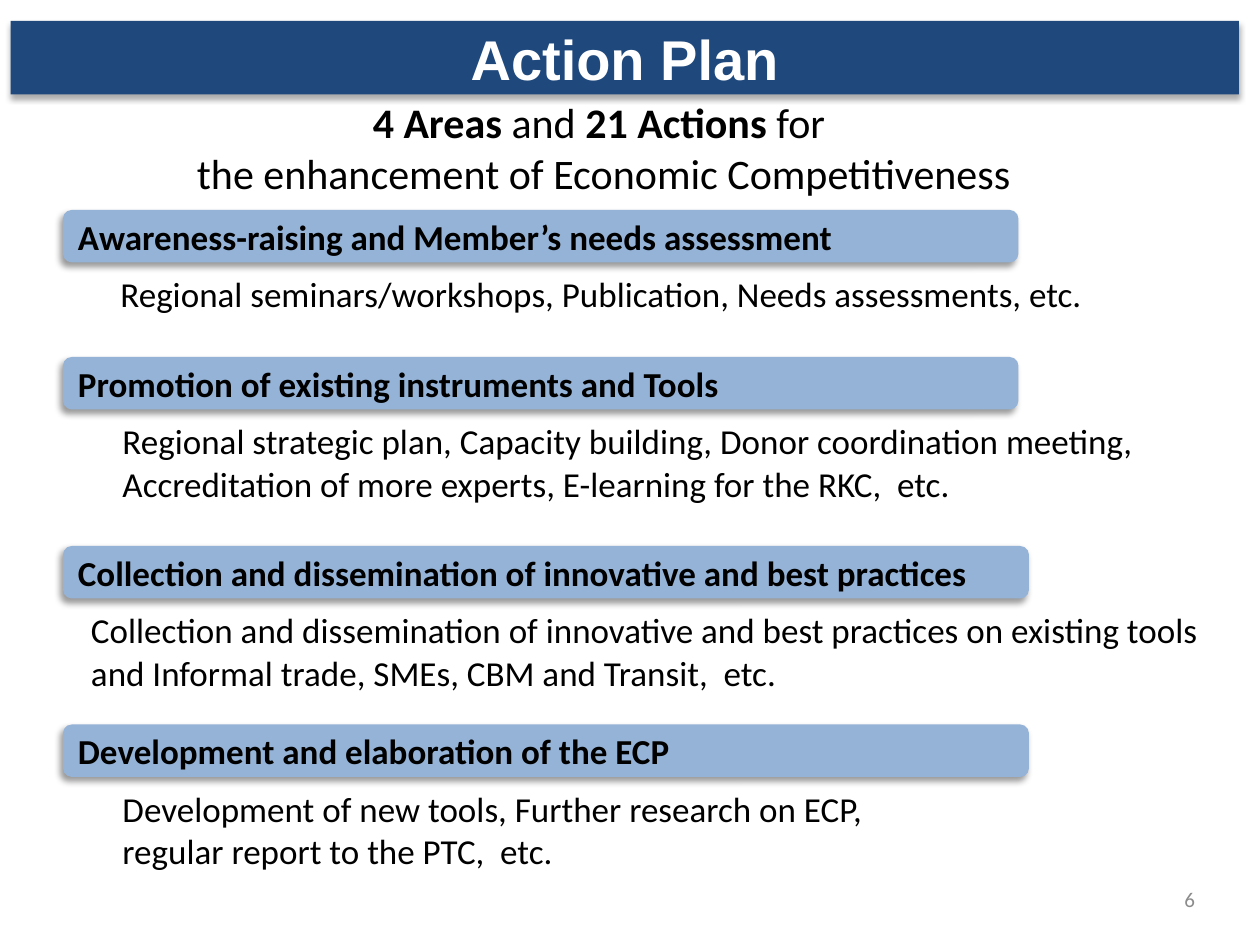
"""Build the Action Plan slide: a title bar, a summary and four areas with their actions."""
from dataclasses import dataclass

from lxml.etree import SubElement as Sub
from pptx import Presentation
from pptx.dml.color import RGBColor as RGB
from pptx.enum.shapes import MSO_SHAPE as Kind
from pptx.enum.text import MSO_ANCHOR as Anchor, PP_ALIGN as Align
from pptx.oxml.ns import qn
from pptx.util import Pt


@dataclass(frozen=True)
class Theme:
    navy: RGB = RGB(0x1F, 0x49, 0x7D)
    blue: RGB = RGB(0x95, 0xB3, 0xD7)
    black: RGB = RGB(0, 0, 0)
    white: RGB = RGB(255, 255, 255)
    grey: RGB = RGB(0x8C, 0x8C, 0x8C)
    head: str = "Arial"
    body: str = "Calibri"
    title: int = 32
    lead: int = 24
    text: int = 20
    note: int = 12


PX = 7620
theme = Theme()


def style(shape, size, color, bold=False, align=Align.LEFT, font=theme.body):
    frame = shape.text_frame
    frame.word_wrap = True
    frame.vertical_anchor = Anchor.MIDDLE
    for para in frame.paragraphs:
        para.alignment = align
        for run in para.runs:
            run.font.name = font
            run.font.size = Pt(size)
            run.font.bold = bold
            run.font.color.rgb = color


def paint(shape, fill=None, alpha=0, blur=0, dist=0, angle=0):
    shape.line.fill.background()
    shape.shadow.inherit = False
    if fill is None:
        shape.fill.background()
        return
    shape.fill.solid()
    shape.fill.fore_color.rgb = fill
    glow = Sub(shape.element.spPr.find(qn("a:effectLst")), qn("a:outerShdw"),
               blurRad=str(Pt(blur)), dist=str(Pt(dist)), dir=str(angle * 60000),
               algn="ctr", rotWithShape="0")
    tint = Sub(glow, qn("a:srgbClr"), val=str(theme.black))
    Sub(tint, qn("a:alpha"), val=str(alpha * 1000))


deck = Presentation()
deck.slide_width, deck.slide_height = 1200 * PX, 900 * PX
slide = deck.slides.add_slide(deck.slide_layouts[5])
shapes = slide.shapes

title = shapes.title
title.left, title.top, title.width, title.height = [n * PX for n in (10, 20, 1170, 70)]
form = Sub(title.element.spPr, qn("a:prstGeom"), prst="roundRect")
Sub(form, qn("a:avLst"))
paint(title, theme.navy, 32, 3.5, 2.2, 90)
title.text_frame.text = "Action Plan"
style(title, theme.title, theme.white, True, Align.CENTER, theme.head)

lead = shapes.add_shape(Kind.ROUNDED_RECTANGLE, *[n * PX for n in (20, 100, 1110, 80)])
lead.adjustments[0] = 0.11
paint(lead)
lead.text_frame.text = "\nthe enhancement of Economic Competitiveness"
first = lead.text_frame.paragraphs[0]
for part in ("4 Areas ", "and ", "21 Actions ", "for "):
    first.add_run().text = part
style(lead, theme.lead, theme.black, align=Align.CENTER)
for run in first.runs[::2]:
    run.font.bold = True

areas = [
    (200, 910, "Awareness-raising and Member’s needs assessment",
     100, 1010, 60, "Regional seminars/workshops, Publication, Needs assessments, etc."),
    (340, 910, "Promotion of existing instruments and Tools",
     100, 1010, 100, "Regional strategic plan, Capacity building, Donor coordination meeting,\n"
     "Accreditation of more experts, E-learning for the RKC,  etc."),
    (520, 920, "Collection and dissemination of innovative and best practices",
     70, 1130, 100, "Collection and dissemination of innovative and best practices on existing "
     "tools and Informal trade, SMEs, CBM and Transit,  etc."),
    (690, 920, "Development and elaboration of the ECP",
     100, 1020, 100, "Development of new tools, Further research on ECP,\n"
     "regular report to the PTC,  etc."),
]
for top, wide, name, left, span, tall, acts in areas:
    box = shapes.add_shape(Kind.ROUNDED_RECTANGLE, left * PX, (top + 50) * PX, span * PX, tall * PX)
    paint(box)
    box.text_frame.text = acts
    style(box, theme.text, theme.black)

    bar = shapes.add_shape(Kind.ROUNDED_RECTANGLE, 60 * PX, top * PX, wide * PX, 50 * PX)
    paint(bar, theme.blue, 40, 4, 3, 135)
    bar.text_frame.text = name
    style(bar, theme.text, theme.black, True)

page = shapes.add_textbox(*[n * PX for n in (870, 832, 280, 48)])
page.text_frame.text = "6"
style(page, theme.note, theme.grey, align=Align.RIGHT)

deck.save("out.pptx")
